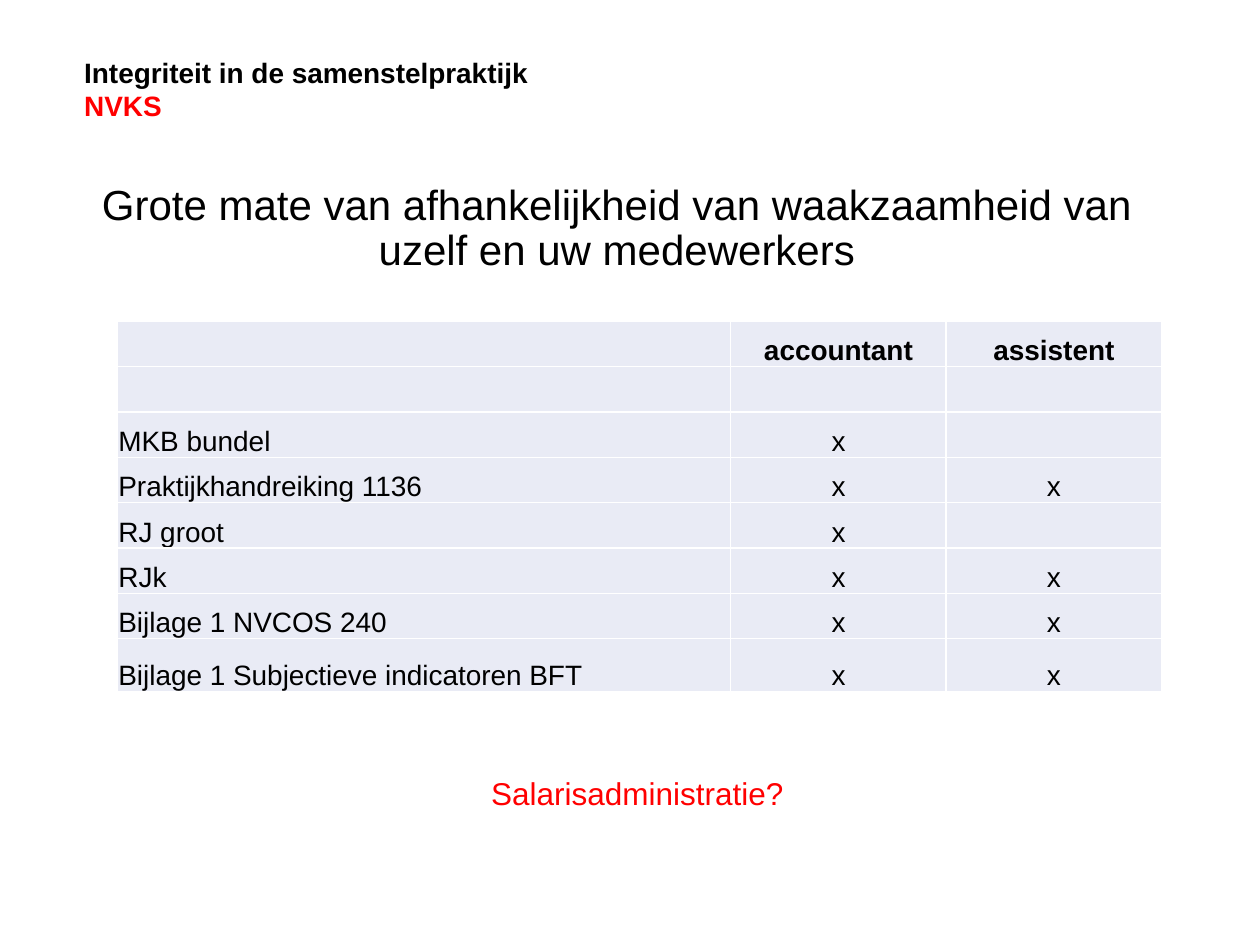
from lxml.etree import SubElement
from pptx import Presentation
from pptx.dml.color import RGBColor
from pptx.enum.text import MSO_ANCHOR as Anchor, PP_ALIGN as Align
from pptx.oxml.ns import qn
from pptx.util import Inches, Pt

COLORS = {"ink": "000000", "accent": "FF0000", "cell": "E9EBF5", "grid": "FFFFFF"}
COLUMN_WIDTHS = [4.87, 1.71, 1.71]
ROW_HEIGHTS = [0.36] * 7 + [0.42]
ROWS = [
    ("", "accountant", "assistent"),
    ("", "", ""),
    ("MKB bundel", "x", ""),
    ("Praktijkhandreiking 1136", "x", "x"),
    ("RJ groot", "x", ""),
    ("RJk", "x", "x"),
    ("Bijlage 1 NVCOS 240", "x", "x"),
    ("Bijlage 1 Subjectieve indicatoren BFT", "x", "x"),
]


def rgb(name):
    """Return the named colour."""
    return RGBColor.from_string(COLORS[name])


def style(paragraph, size, color="ink", bold=False, align=Align.LEFT):
    """Set the font and alignment of a paragraph."""
    paragraph.alignment = align
    font = paragraph.font
    font.name, font.size, font.bold = "Arial", Pt(size), bold
    font.color.rgb = rgb(color)


def add_text(slide, box, lines, size, bold=False, align=Align.LEFT, wrap=True):
    """Add a text box with one paragraph per (text, colour) line."""
    frame = slide.shapes.add_textbox(*map(Inches, box)).text_frame
    frame.word_wrap = wrap
    frame.text = "\n".join(text for text, _ in lines)
    for paragraph, (_, color) in zip(frame.paragraphs, lines):
        style(paragraph, size, color, bold, align)
    return frame


def add_borders(cell):
    """Draw a thin line on all four sides of a cell."""
    properties = cell._tc.get_or_add_tcPr()
    for side in ("a:lnL", "a:lnR", "a:lnT", "a:lnB"):
        line = SubElement(properties, qn(side), w=str(Pt(1)))
        fill = SubElement(line, qn("a:solidFill"))
        SubElement(fill, qn("a:srgbClr"), val=COLORS["grid"])


def fill_cell(cell, text, bold, align):
    """Write and format one table cell."""
    add_borders(cell)
    cell.fill.solid()
    cell.fill.fore_color.rgb = rgb("cell")
    cell.margin_left = cell.margin_right = cell.margin_top = Inches(0.01)
    cell.margin_bottom = 0
    cell.vertical_anchor = Anchor.BOTTOM
    cell.text = text
    style(cell.text_frame.paragraphs[0], 16, bold=bold, align=align)


def add_guidance_table(slide):
    """Add the table of sources for accountant and assistant."""
    box = (0.93, 2.55, sum(COLUMN_WIDTHS), sum(ROW_HEIGHTS))
    table = slide.shapes.add_table(
        len(ROWS), len(COLUMN_WIDTHS), *map(Inches, box)).table
    table.first_row = table.horz_banding = False
    for column, width in zip(table.columns, COLUMN_WIDTHS):
        column.width = Inches(width)
    for r, (row, height) in enumerate(zip(ROWS, ROW_HEIGHTS)):
        table.rows[r].height = Inches(height)
        for c, text in enumerate(row):
            align = Align.CENTER if c else Align.LEFT
            fill_cell(table.cell(r, c), text, r == 0, align)


def main():
    """Build the slide and save it."""
    deck = Presentation()
    deck.slide_width, deck.slide_height = Inches(10), Inches(7.5)
    slide = deck.slides.add_slide(deck.slide_layouts[6])
    message = add_text(
        slide, (0.57, 1.41, 8.65, 5.28),
        [("Grote mate van afhankelijkheid van waakzaamheid van uzelf en uw medewerkers", "ink")],
        24, align=Align.CENTER)
    message.paragraphs[0].line_spacing = 0.9
    add_text(slide, (0.57, 0.39, 8.65, 0.64),
             [("Integriteit in de samenstelpraktijk", "ink"), ("NVKS", "accent")],
             16, bold=True)
    add_guidance_table(slide)
    add_text(slide, (3.8, 6.09, 2.54, 0.4),
             [("Salarisadministratie?", "accent")], 18, wrap=False)
    deck.save("out.pptx")


if __name__ == "__main__":
    main()
